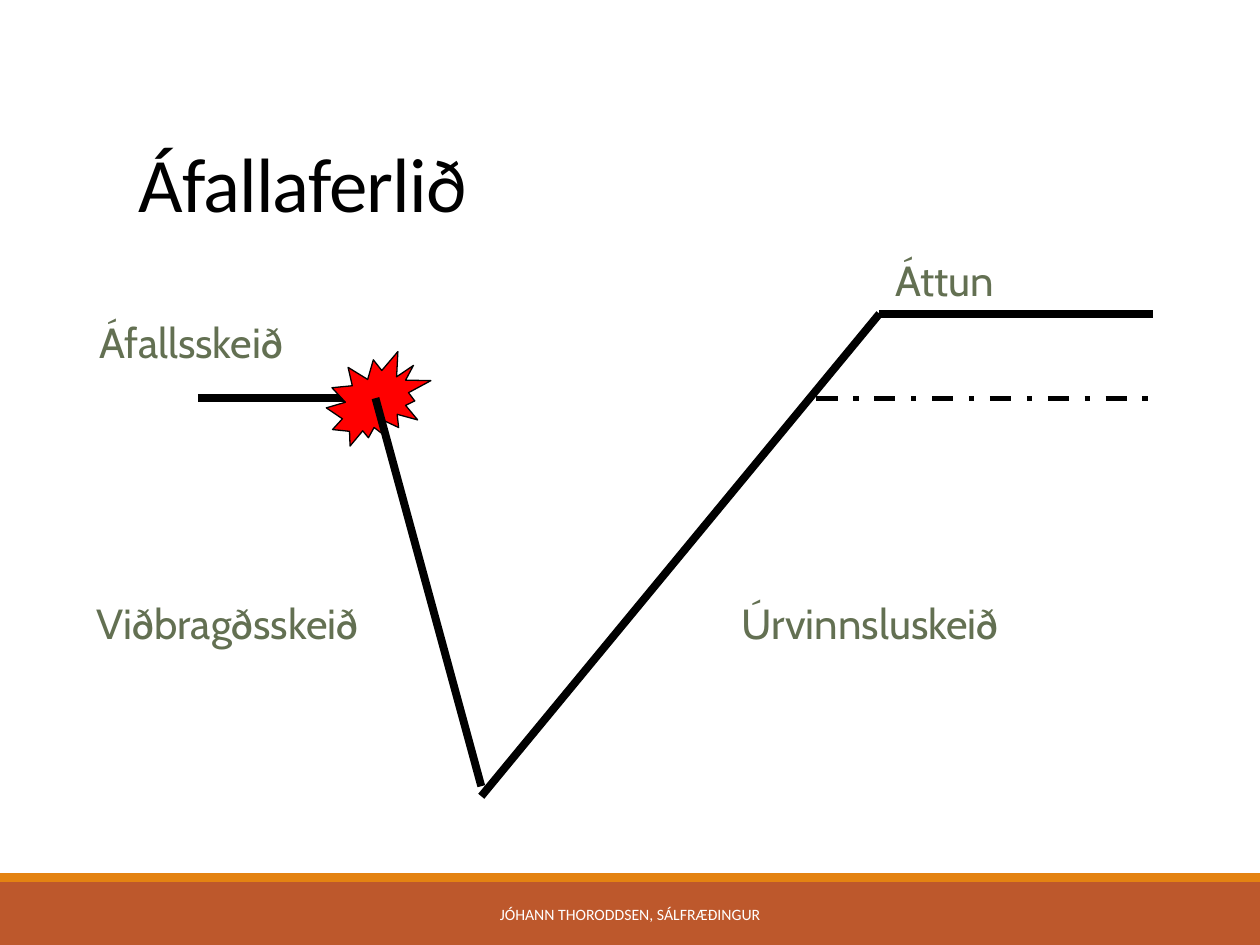
from pptx import Presentation
from pptx import util as u
from pptx.dml.color import RGBColor
from pptx.enum import dml, shapes, text
from pptx.oxml.ns import qn
from lxml import etree

IN = u.Inches
INK, GREEN, WHITE = "000000", "637052", "FFFFFF"


def color(code):
    return RGBColor.from_string(code)


def style(item, **vals):
    for key, val in vals.items():
        setattr(item, key, val)


def add_form(slide, kind, box, fill, edge=None):
    form = slide.shapes.add_shape(kind, *map(IN, box))
    form.shadow.inherit = False
    form.fill.solid()
    form.fill.fore_color.rgb = color(fill)
    if edge:
        form.line.color.rgb = color(edge)
        form.line.width = u.Pt(0.75)
    else:
        form.line.fill.background()
    return form


def add_line(slide, start, end, width=4.5, dash=None):
    line = slide.shapes.add_connector(
        shapes.MSO_CONNECTOR.STRAIGHT, *map(IN, start + end))
    line.line.color.rgb = color(INK)
    style(line.line, width=u.Pt(width), dash_style=dash)
    etree.SubElement(line._element.spPr, qn("a:effectLst"))


def add_text(slide, box, words, size, font, tint, frame=None, para=None):
    area = slide.shapes.add_textbox(*map(IN, box)).text_frame
    style(area, word_wrap=True, **(frame or {}))
    line = area.paragraphs[0]
    style(line, **(para or {}))
    run = line.add_run()
    run.text = words
    style(run.font, size=u.Pt(size), name=font)
    run.font.color.rgb = color(tint)
    return run


def add_title(slide, box):
    run = add_text(
        slide, box, "Áfallaferlið", 44, "Calibri", INK,
        {"vertical_anchor": text.MSO_ANCHOR.BOTTOM, "margin_left": IN(1.1)},
        {"line_spacing": 0.85})
    run.font._element.set("spc", "-50")


def add_curve(slide, box):
    left, top, width, height = box
    right, base = left + width, top + 0.67
    shock, low, peak = left + 1.41, left + 2.25, left + 5.41

    # Level before the shock and after recovery
    add_line(slide, (left, base), (shock, base))
    add_line(slide, (peak, top), (right, top))
    add_form(slide, shapes.MSO_SHAPE.EXPLOSION2,
             (shock - 0.39, base - 0.37, 0.83, 0.75), "FF0000", INK)

    # Names of the stages
    for x, y, wide, words in (
            (-0.88, -0.03, 1.92, "Áfallsskeið"),
            (-0.9, 2.2, 2.6, "Viðbragðsskeið"),
            (4.22, 2.2, 2.48, "Úrvinnsluskeið"),
            (5.44, -0.52, 1.08, "Áttun")):
        add_text(slide, (left + x, top + y, wide, 0.5),
                 words, 24, "Cabin", GREEN)

    # Fall, climb and the former level
    add_line(slide, (shock, base), (low, top + height - 0.08))
    add_line(slide, (peak, top), (low, top + height))
    add_line(slide, (peak - 0.5, base), (right, base), 3,
             dml.MSO_LINE.DASH_DOT)


def add_footer(slide, box):
    left, top, width, height = box
    rim = 0.07
    rect = shapes.MSO_SHAPE.RECTANGLE
    add_form(slide, rect, (left, top + rim, width, height - rim), "BD582C")
    add_form(slide, rect, (left, top, width, rim), "E48312")
    wide = 3.96
    add_text(slide, (left + (width - wide) / 2, top + 0.13, wide, 0.4),
             "JÓHANN THORODDSEN, SÁLFRÆÐINGUR", 9, "Calibri", WHITE,
             {"vertical_anchor": text.MSO_ANCHOR.MIDDLE},
             {"alignment": text.PP_ALIGN.CENTER})


def main():
    deck = Presentation()
    style(deck, slide_width=IN(10), slide_height=IN(7.5))
    slide = deck.slides.add_slide(deck.slide_layouts[6])
    add_footer(slide, (0, 6.93, 10, 0.57))
    add_title(slide, (0, 0.99, 9.13, 0.87))
    add_curve(slide, (1.57, 2.49, 7.58, 3.83))
    deck.save("out.pptx")


if __name__ == "__main__":
    main()
